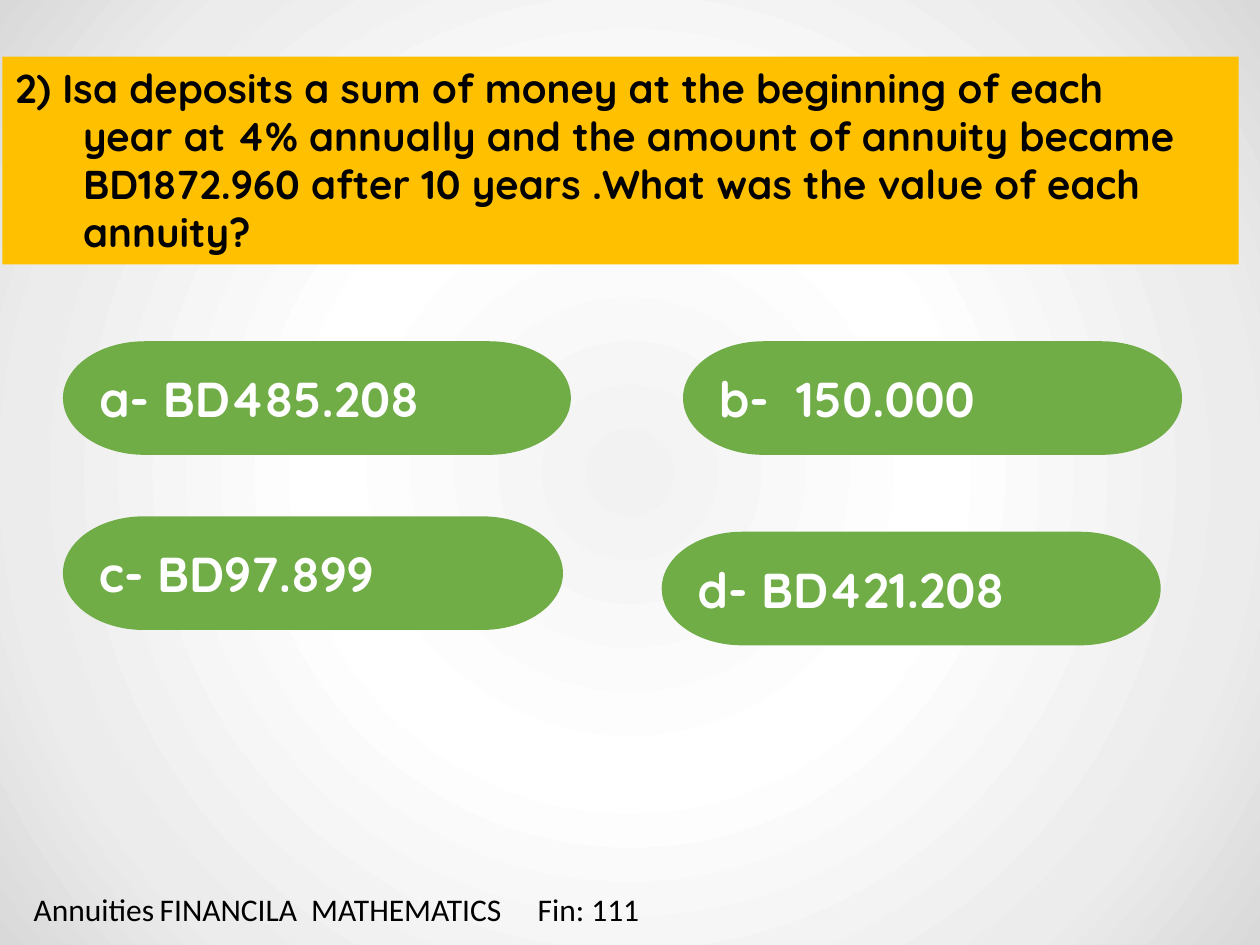
from lxml.etree import SubElement
from pptx import Presentation
from pptx.dml.color import RGBColor
from pptx.enum.shapes import MSO_SHAPE as Preset
from pptx.enum.text import MSO_ANCHOR as Anchor, MSO_AUTO_SIZE as AutoSize, PP_ALIGN as Align
from pptx.oxml import parse_xml
from pptx.oxml.ns import nsdecls, qn
from pptx.util import Cm, Pt

QUESTION = [
    "2) Isa deposits a sum of money at the beginning of each",
    "year at 4% annually and the amount of annuity became",
    "BD1872.960 after 10 years .What was the value of each",
    "annuity?",
]
ANSWERS = [
    ("a- BD485.208", 1.27, 6.88, 10.24),
    ("b-  150.000", 13.77, 6.88, 10.06),
    ("c- BD97.899", 1.27, 10.41, 10.08),
    ("d- BD421.208", 13.34, 10.72, 10.06),
]
BACKGROUND_STOPS = [(0, "F2F2F2"), (39, "FFFFFF"), (78, "ECECEC"), (100, "D9D9D9")]


def color(value):
    return RGBColor.from_string(value)


def write(paragraph, text, font="Quicksand", size=28, fill="FFFFFF", bold=True,
          indent=0, tabs=()):
    paragraph.alignment = Align.LEFT
    properties = paragraph._p.get_or_add_pPr()
    properties.set("marL", str(Cm(indent)))
    properties.set("indent", "0")
    if tabs:
        tab_list = SubElement(properties, qn("a:tabLst"))
        for position in tabs:
            SubElement(tab_list, qn("a:tab"), pos=str(Cm(position)), algn="l")
    run = paragraph.add_run()
    run.text = text
    run.font.name = font
    run.font.size = Pt(size)
    run.font.bold = bold
    run.font.color.rgb = color(fill)


def place(shape, left, top, width, height):
    shape.left, shape.top = Cm(left), Cm(top)
    shape.width, shape.height = Cm(width), Cm(height)


def paint_background(slide):
    stops = "".join(
        f'<a:gs pos="{position * 1000}"><a:srgbClr val="{value}"/></a:gs>'
        for position, value in BACKGROUND_STOPS
    )
    gradient = parse_xml(
        f'<a:gradFill {nsdecls("a")} rotWithShape="1"><a:gsLst>{stops}</a:gsLst>'
        '<a:path path="circle"><a:fillToRect l="50000" t="50000" r="50000" b="50000"/>'
        "</a:path></a:gradFill>"
    )
    fill = slide.background.fill
    fill.solid()
    properties = slide._element.cSld.bg.bgPr
    properties.replace(properties.find(qn("a:solidFill")), gradient)


def add_question(slide):
    title = slide.shapes.title
    place(title, 0.05, 1.14, 24.92, 4.19)
    title.fill.solid()
    title.fill.fore_color.rgb = color("FFC000")
    frame = title.text_frame
    frame.word_wrap = True
    frame.auto_size = AutoSize.NONE
    frame.vertical_anchor = Anchor.TOP
    for number, line in enumerate(QUESTION):
        paragraph = frame.add_paragraph() if number else frame.paragraphs[0]
        write(paragraph, line, size=23, fill="000000", indent=1.37 if number else 0)


def add_answer(slide, text, left, top, width):
    shape = slide.shapes.add_shape(
        Preset.FLOWCHART_TERMINATOR, Cm(left), Cm(top), Cm(width), Cm(2.29))
    shape.shadow.inherit = False
    shape.fill.solid()
    shape.fill.fore_color.rgb = color("70AD47")
    shape.line.fill.background()
    shape.text_frame.vertical_anchor = Anchor.MIDDLE
    write(shape.text_frame.paragraphs[0], text)


def add_footer(slide):
    box = slide.shapes.add_textbox(Cm(0.28), Cm(17.81), Cm(14.22), Cm(1.02))
    frame = box.text_frame
    frame.word_wrap = True
    frame.margin_left = Cm(0.4)
    write(frame.paragraphs[0], "Annuities\tFINANCILA  MATHEMATICS\tFin: 111",
          font="Calibri", size=18, fill="000000", bold=False, tabs=(3.43, 11.17))


def main():
    presentation = Presentation()
    presentation.slide_width, presentation.slide_height = Cm(25.4), Cm(19.05)
    slide = presentation.slides.add_slide(presentation.slide_layouts[5])
    paint_background(slide)
    add_question(slide)
    for answer in ANSWERS:
        add_answer(slide, *answer)
    add_footer(slide)
    presentation.save("out.pptx")


if __name__ == "__main__":
    main()
